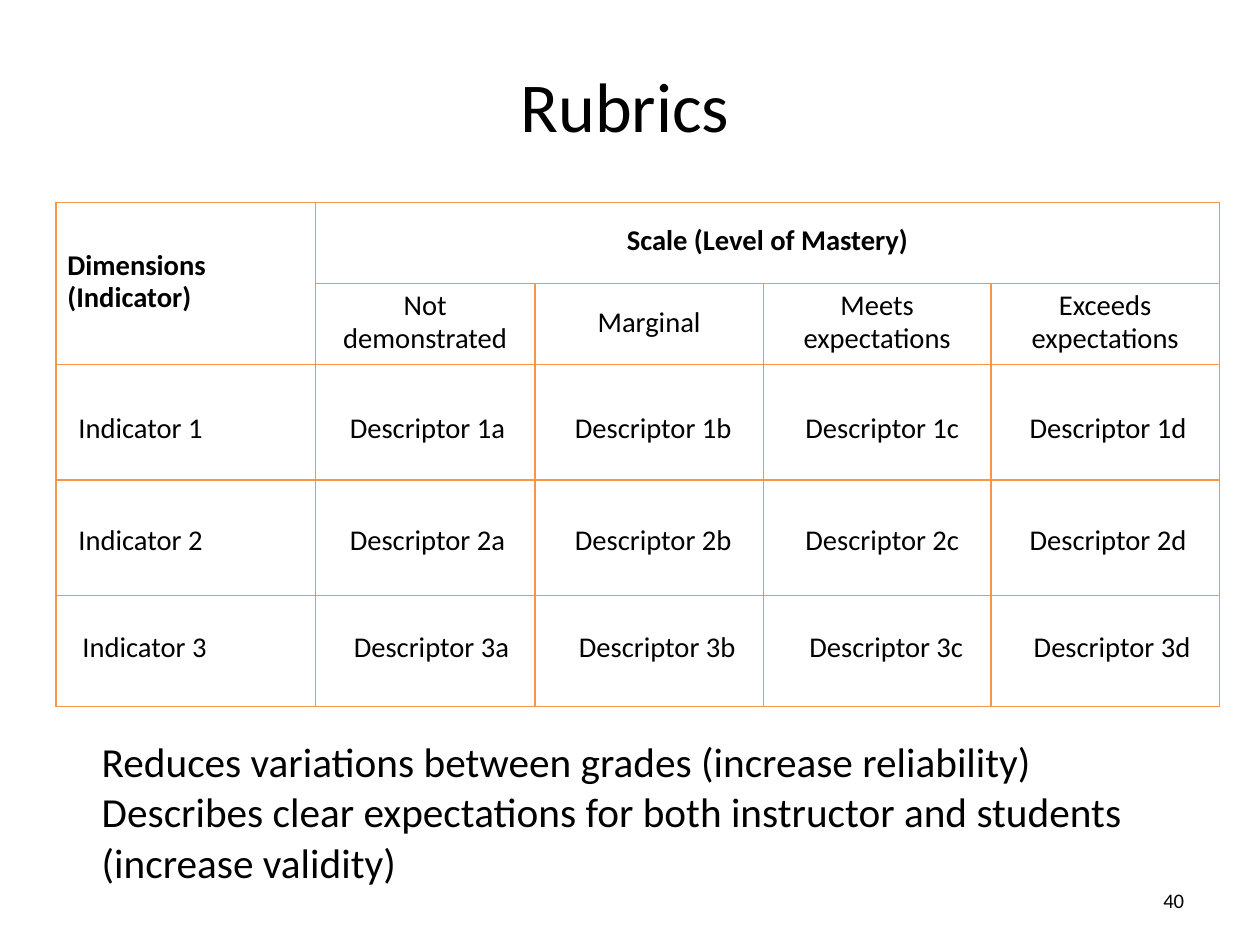
from itertools import accumulate, product

from lxml.etree import SubElement
from pptx import Presentation
from pptx.dml.color import RGBColor
from pptx.enum.text import MSO_ANCHOR, MSO_AUTO_SIZE, PP_ALIGN
from pptx.oxml.ns import qn
from pptx.util import Emu, Inches, Pt

UNIT = Inches(0.1)  # one step of the slide grid
INK, RULE = "000000", "F79646"

COLUMN_WIDTHS = [22.7, 19.2, 20, 19.9, 20]
ROW_HEIGHTS = [7.1, 7.1, 10.1, 10.1, 9.7]
LEVELS = ["Not demonstrated", "Marginal", "Meets expectations", "Exceeds expectations"]
BENEFITS = [
    "Reduces variations between grades (increase reliability)",
    "Describes clear expectations for both instructor and students (increase validity)",
]


def grid(*steps):
    return [round(step * UNIT) for step in steps]


def color(hex_string):
    return RGBColor.from_string(hex_string)


def write(frame, lines, size, align=PP_ALIGN.LEFT, spacing=1.0, bold=False):
    frame.text = "\n".join(lines)
    for paragraph in frame.paragraphs:
        paragraph.alignment = align
        paragraph.line_spacing = spacing
        paragraph.space_before = Pt(0)
        paragraph.font.name = "Calibri"
        paragraph.font.size = Pt(size)
        paragraph.font.bold = bold
        paragraph.font.color.rgb = color(INK)


def set_insets(frame, across, down):
    frame.margin_left = frame.margin_right = Inches(across)
    frame.margin_top = frame.margin_bottom = Inches(down)


def move(placeholder, box):
    placeholder.left, placeholder.top, placeholder.width, placeholder.height = grid(*box)
    placeholder.text_frame.auto_size = MSO_AUTO_SIZE.NONE


def add_title(slide, box):
    title = slide.shapes.title
    move(title, box)
    set_insets(title.text_frame, 0.11, 0.06)
    title.text_frame.vertical_anchor = MSO_ANCHOR.MIDDLE
    write(title.text_frame, ["Rubrics"], 44.1, PP_ALIGN.CENTER)


def add_benefits(slide, box):
    benefits = slide.placeholders[1]
    move(benefits, box)
    set_insets(benefits.text_frame, 0.1, 0.05)
    write(benefits.text_frame, BENEFITS, 26, spacing=1.02)
    for paragraph in benefits.text_frame.paragraphs:
        properties = paragraph._p.get_or_add_pPr()
        properties.set("marL", "0")
        properties.set("indent", "0")
        # Bullets come before the default run properties
        bullet = SubElement(properties, qn("a:buNone"))
        properties.find(qn("a:defRPr")).addprevious(bullet)


def add_page_number(slide, box):
    frame = slide.shapes.add_textbox(*grid(*box)).text_frame
    frame.word_wrap = True
    frame.vertical_anchor = MSO_ANCHOR.MIDDLE
    set_insets(frame, 0.11, 0.06)
    write(frame, ["40"], 13, PP_ALIGN.RIGHT)


def set_borders(cell):
    properties = cell._tc.get_or_add_tcPr()
    for side in ("a:lnL", "a:lnR", "a:lnT", "a:lnB"):
        line = SubElement(properties, qn(side), w=str(Pt(1)))
        fill = SubElement(line, qn("a:solidFill"))
        SubElement(fill, qn("a:srgbClr"), val=RULE)


def add_rubric(slide, box):
    table = slide.shapes.add_table(
        len(ROW_HEIGHTS), len(COLUMN_WIDTHS), *grid(*box)).table
    table.first_row = table.horz_banding = False
    for column, width in zip(table.columns, grid(*COLUMN_WIDTHS)):
        column.width = width
    for row, height in zip(table.rows, grid(*ROW_HEIGHTS)):
        row.height = height

    for row, column in product(range(len(ROW_HEIGHTS)), range(len(COLUMN_WIDTHS))):
        cell = table.cell(row, column)
        set_borders(cell)
        cell.fill.background()
        cell.vertical_anchor = MSO_ANCHOR.MIDDLE
        cell.margin_left = cell.margin_right = Inches(0.1)
        cell.margin_top, cell.margin_bottom = Inches(0.02), Inches(0.05)

    # Header
    dimensions, scale = table.cell(0, 0), table.cell(0, 1)
    dimensions.merge(table.cell(1, 0))
    scale.merge(table.cell(0, len(LEVELS)))
    write(dimensions.text_frame, ["Dimensions", "(Indicator)"], 18, spacing=0.93, bold=True)
    write(scale.text_frame, ["Scale (Level of Mastery)"], 18, PP_ALIGN.CENTER, 0.93, True)
    for column, level in enumerate(LEVELS, start=1):
        write(table.cell(1, column).text_frame, [level], 18, PP_ALIGN.CENTER, 0.93)


def add_labels(slide, box):
    left, top = box[:2]
    starts = accumulate(COLUMN_WIDTHS[:-1], initial=left)
    offsets = [0.9, 1.9, 2.4, 2.6, 2.3]
    widths = [13, 15.8, 15.9, 15.6, 15.9]
    # Each row: distance below the table's top, shift to the right
    rows = [(17.9, 0), (27.7, 0), (37.1, 0.35)]
    for column, (start, offset, width) in enumerate(zip(starts, offsets, widths)):
        for number, (down, shift) in enumerate(rows, start=1):
            label = f"Descriptor {number}{'abcd'[column - 1]}" if column else f"Indicator {number}"
            frame = slide.shapes.add_textbox(
                *grid(start + offset + shift, top + down, width, 3.8)).text_frame
            frame.word_wrap = False
            frame.auto_size = MSO_AUTO_SIZE.SHAPE_TO_FIT_TEXT
            write(frame, [label], 18, PP_ALIGN.CENTER, 0.93)


def main():
    deck = Presentation()
    deck.slide_width = Emu(10080625)
    deck.slide_height = Emu(7559675)
    slide = deck.slides.add_slide(deck.slide_layouts[1])
    rubric_box = (4.9, 17.7, sum(COLUMN_WIDTHS), sum(ROW_HEIGHTS))
    add_title(slide, (5.1, 5.9, 99.2, 6.5))
    add_page_number(slide, (79, 76.6, 25.7, 4.4))
    add_rubric(slide, rubric_box)
    add_benefits(slide, (7.9, 63.8, 96.5, 9.8))
    add_labels(slide, rubric_box)
    deck.save("out.pptx")


if __name__ == "__main__":
    main()
